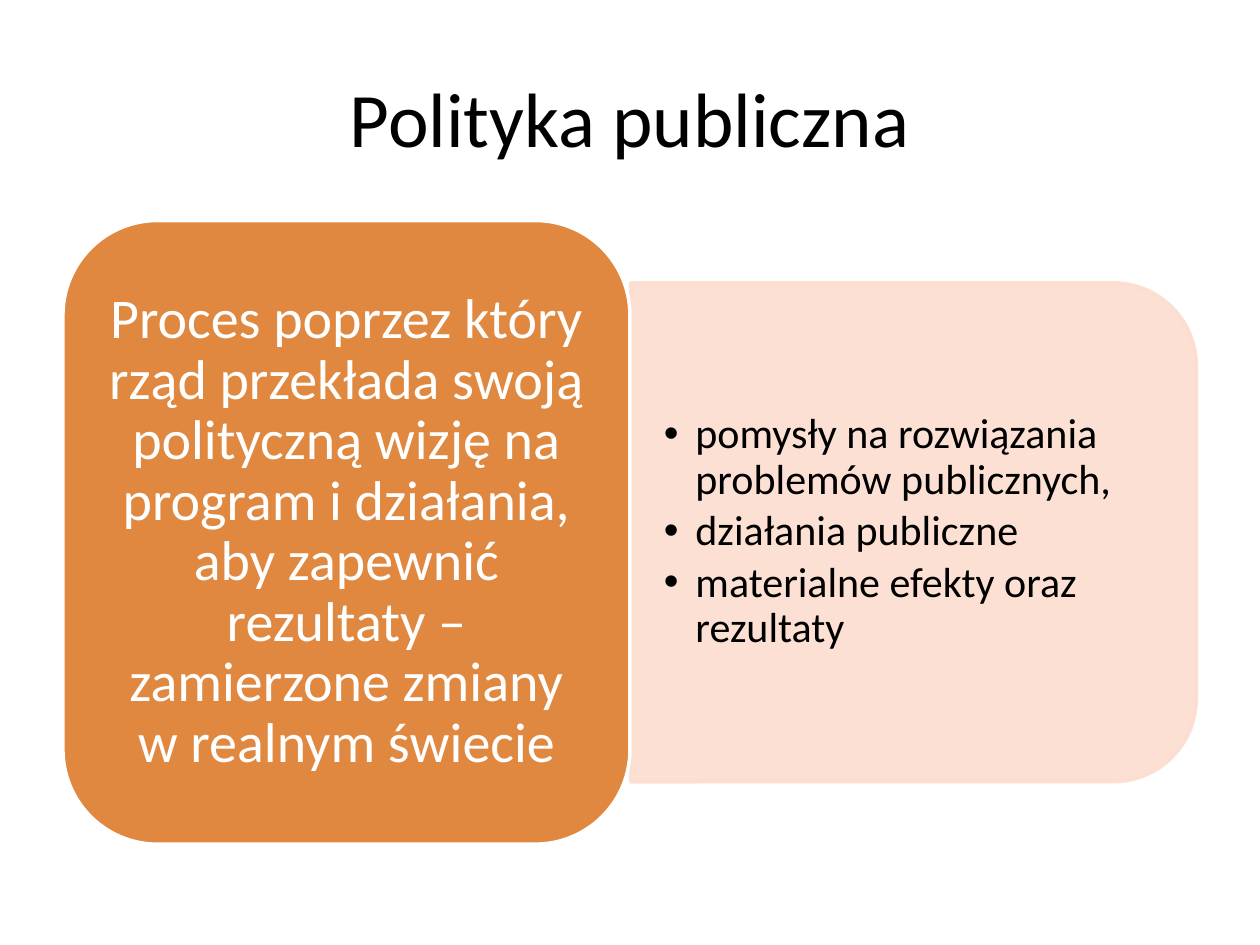
import pptx
import pptx.util
import pptx.dml.color
import pptx.enum.shapes
import pptx.enum.text
import pptx.oxml.ns
from lxml import etree

Inches = pptx.util.Inches
Pt = pptx.util.Pt
RGBColor = pptx.dml.color.RGBColor
MSO_SHAPE = pptx.enum.shapes.MSO_SHAPE
PP_ALIGN = pptx.enum.text.PP_ALIGN
qn = pptx.oxml.ns.qn

BLACK = RGBColor(0x00, 0x00, 0x00)
WHITE = RGBColor(0xFF, 0xFF, 0xFF)
ORANGE = RGBColor(0xE0, 0x88, 0x40)
PEACH = RGBColor(0xFC, 0xDD, 0xCF)

prs = pptx.Presentation()
prs.slide_width = Inches(10)
prs.slide_height = Inches(7.5)
s = prs.slides.add_slide(prs.slide_layouts[6])


def add_panel(kind, box, fill, line):
    sp = s.shapes.add_shape(kind, *[Inches(v) for v in box])
    sp.shadow.inherit = False
    sp.fill.solid()
    sp.fill.fore_color.rgb = fill
    sp.line.color.rgb = line
    sp.line.width = Pt(2)
    return sp


def add_text(box, inset, texts, size, color, after=0, spacing=1, bullets=False):
    tf = s.shapes.add_textbox(*[Inches(v) for v in box]).text_frame
    tf.word_wrap = True
    tf.vertical_anchor = pptx.enum.text.MSO_ANCHOR.MIDDLE
    tf.margin_left = tf.margin_right = Inches(inset[0])
    tf.margin_top = tf.margin_bottom = Inches(inset[1])
    for i, text in enumerate(texts):
        p = tf.add_paragraph() if i else tf.paragraphs[0]
        p.line_spacing = spacing
        p.space_after = Pt(after)
        p.alignment = PP_ALIGN.LEFT if bullets else PP_ALIGN.CENTER
        if bullets:
            p.level = 1
            pPr = p._p.get_or_add_pPr()
            pPr.set("marL", str(Inches(0.25)))
            pPr.set("indent", str(-Inches(0.25)))
            etree.SubElement(pPr, qn("a:buFont")).set("typeface", "Arial")
            etree.SubElement(pPr, qn("a:buChar")).set("char", "•")
        r = p.add_run()
        r.text = text
        r.font.name = "Calibri"
        r.font.size = Pt(size)
        r.font.color.rgb = color


add_text((0.5, 0.3, 9, 1.25), (0.1, 0.05), ["Polityka publiczna"], 44, BLACK)

sp = add_panel(MSO_SHAPE.ROUND_2_SAME_RECTANGLE, (5.27, 1.98, 3.96, 4.49), PEACH, PEACH)
sp.rotation = 90
for clr in sp._element.spPr.iter(qn("a:srgbClr")):
    etree.SubElement(clr, qn("a:alpha")).set("val", "90000")

effects = [
    "pomysły na rozwiązania problemów publicznych,",
    "działania publiczne",
    "materialne efekty oraz rezultaty",
]
add_text((5, 2.44, 4.3, 3.57), (0.27, 0.14), effects, 24, BLACK,
         after=3.6, spacing=0.9, bullets=True)

add_panel(MSO_SHAPE.ROUNDED_RECTANGLE, (0.5, 1.75, 4.5, 4.95), ORANGE, WHITE)
definition = ("Proces poprzez który rząd przekłada swoją polityczną wizję na program "
              "i działania, aby zapewnić rezultaty – zamierzone zmiany w realnym świecie")
add_text((0.72, 1.97, 4.06, 4.51), (0.13, 0.07), [definition], 32, WHITE,
         after=11.2, spacing=0.9)

prs.save("out.pptx")
